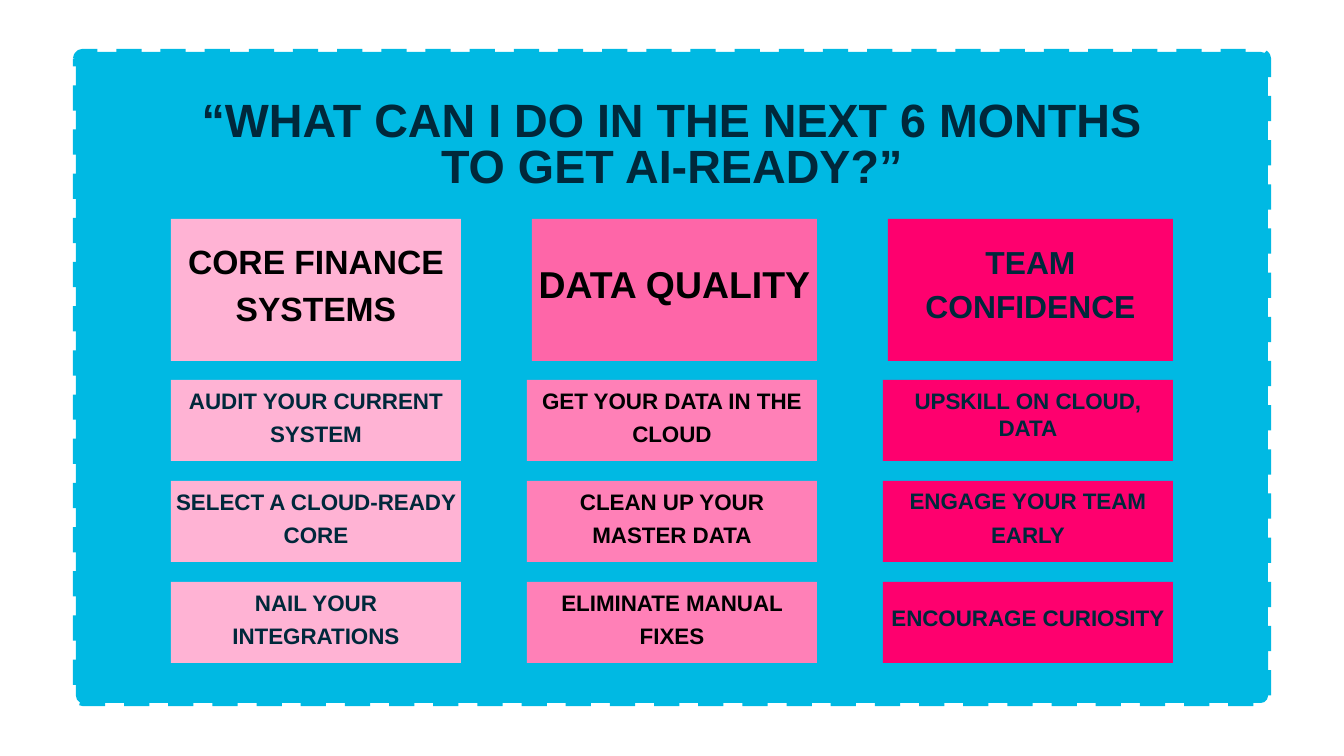
from pptx import Presentation
from pptx import util as u
from pptx.dml.color import RGBColor
from pptx.enum import dml, shapes, text

TITLE = "“WHAT CAN I DO IN THE NEXT 6 MONTHS TO GET AI-READY?”"
COLORS = {
    "frame": "00B9E3", "navy": "00283B", "black": "000000",
    "pale": "FFB3D4", "mid": "FE66A8", "soft": "FF80B7", "vivid": "FE006E",
}
# Header: text, size pt, line pitch pt, colour, fill, left indent px, lift px
# Items: text, line pitch pt, lift px (how far the text area reaches above the box)
COLUMNS = [
    {"header": ("CORE FINANCE SYSTEMS", 24, 33.6, "black", "pale", 0, 18),
     "fill": "pale", "color": "navy",
     "items": [("AUDIT YOUR CURRENT SYSTEM", 23.3, 13),
               ("SELECT A CLOUD-READY CORE", 23.3, 13),
               ("NAIL YOUR INTEGRATIONS", 23.3, 13)]},
    {"header": ("DATA QUALITY", 26.7, 37.3, "black", "mid", 5, 21),
     "fill": "soft", "color": "black",
     "items": [("GET YOUR DATA IN THE CLOUD", 23.3, 13),
               ("CLEAN UP YOUR MASTER DATA", 23.3, 13),
               ("ELIMINATE MANUAL FIXES", 23.3, 13)]},
    {"header": ("TEAM CONFIDENCE", 22.7, 31.7, "navy", "vivid", 5, 18),
     "fill": "vivid", "color": "navy",
     "items": [("UPSKILL ON CLOUD, DATA", 19.6, 13),
               ("ENGAGE YOUR TEAM EARLY", 24.3, 16),
               ("ENCOURAGE CURIOSITY", 20.5, 11)]},
]

# Layout in px
SLIDE = (1344, 756)
FRAME = (76, 52, 1192, 651)
FRAME_RADIUS = 7
TITLE_BOX = (171, 100, 1002, 96)
COLUMN_LEFT, COLUMN_STEP, COLUMN_WIDTH = 171, 356, 290
HEADER_TOP, HEADER_HEIGHT = 219, 142
ITEM_TOP, ITEM_STEP, ITEM_HEIGHT = 380, 101, 81
SIDE_INSET = 4
EMU_PER_PX = 914400 / 100.8


def px(length):
    return u.Emu(round(length * EMU_PER_PX))


def rgb(name):
    return RGBColor.from_string(COLORS[name])


def write_text(shape, words, *, size, pitch, color, anchor, side=0, bottom=0):
    frame = shape.text_frame
    frame.word_wrap = True
    frame.auto_size = text.MSO_AUTO_SIZE.NONE
    frame.vertical_anchor = anchor
    frame.margin_left = frame.margin_right = px(side)
    frame.margin_top, frame.margin_bottom = 0, px(bottom)
    paragraph = frame.paragraphs[0]
    paragraph.alignment = text.PP_ALIGN.CENTER
    paragraph.line_spacing = u.Pt(pitch)
    paragraph.space_before = paragraph.space_after = u.Pt(0)
    run = paragraph.add_run()
    run.text = words
    run.font.name, run.font.size, run.font.bold = "Arial", u.Pt(size), True
    run.font.color.rgb = rgb(color)


def add_block(slide, kind, box, fill):
    shape = slide.shapes.add_shape(kind, *map(px, box))
    shape.shadow.inherit = False
    shape.fill.solid()
    shape.fill.fore_color.rgb = rgb(fill)
    shape.line.fill.background()
    return shape


def add_card(slide, box, fill, words, lift, **style):
    card = add_block(slide, shapes.MSO_SHAPE.RECTANGLE, box, fill)
    write_text(card, words, anchor=text.MSO_ANCHOR.MIDDLE,
               side=SIDE_INSET, bottom=lift, **style)


def main():
    presentation = Presentation()
    presentation.slide_width, presentation.slide_height = map(px, SLIDE)
    slide = presentation.slides.add_slide(presentation.slide_layouts[5])

    # Dashed frame
    frame = add_block(slide, shapes.MSO_SHAPE.ROUNDED_RECTANGLE, FRAME, "frame")
    frame.adjustments[0] = FRAME_RADIUS / FRAME[3]
    frame.line.color.rgb = rgb("frame")
    frame.line.width = u.Pt(4.5)
    frame.line.dash_style = dml.MSO_LINE.DASH

    # Title, raised above the frame
    title = slide.shapes.title
    title.left, title.top, title.width, title.height = map(px, TITLE_BOX)
    write_text(title, TITLE, size=33.3, pitch=33.3, color="navy",
               anchor=text.MSO_ANCHOR.TOP)
    frame._element.addnext(title._element)

    # Columns of cards
    for number, column in enumerate(COLUMNS):
        left = COLUMN_LEFT + number * COLUMN_STEP
        words, size, pitch, color, fill, indent, lift = column["header"]
        box = (left + indent, HEADER_TOP, COLUMN_WIDTH - indent, HEADER_HEIGHT)
        add_card(slide, box, fill, words, lift, size=size, pitch=pitch, color=color)
        for row, (words, pitch, lift) in enumerate(column["items"]):
            box = (left, ITEM_TOP + row * ITEM_STEP, COLUMN_WIDTH, ITEM_HEIGHT)
            add_card(slide, box, column["fill"], words, lift,
                     size=16, pitch=pitch, color=column["color"])

    presentation.save("out.pptx")


if __name__ == "__main__":
    main()
